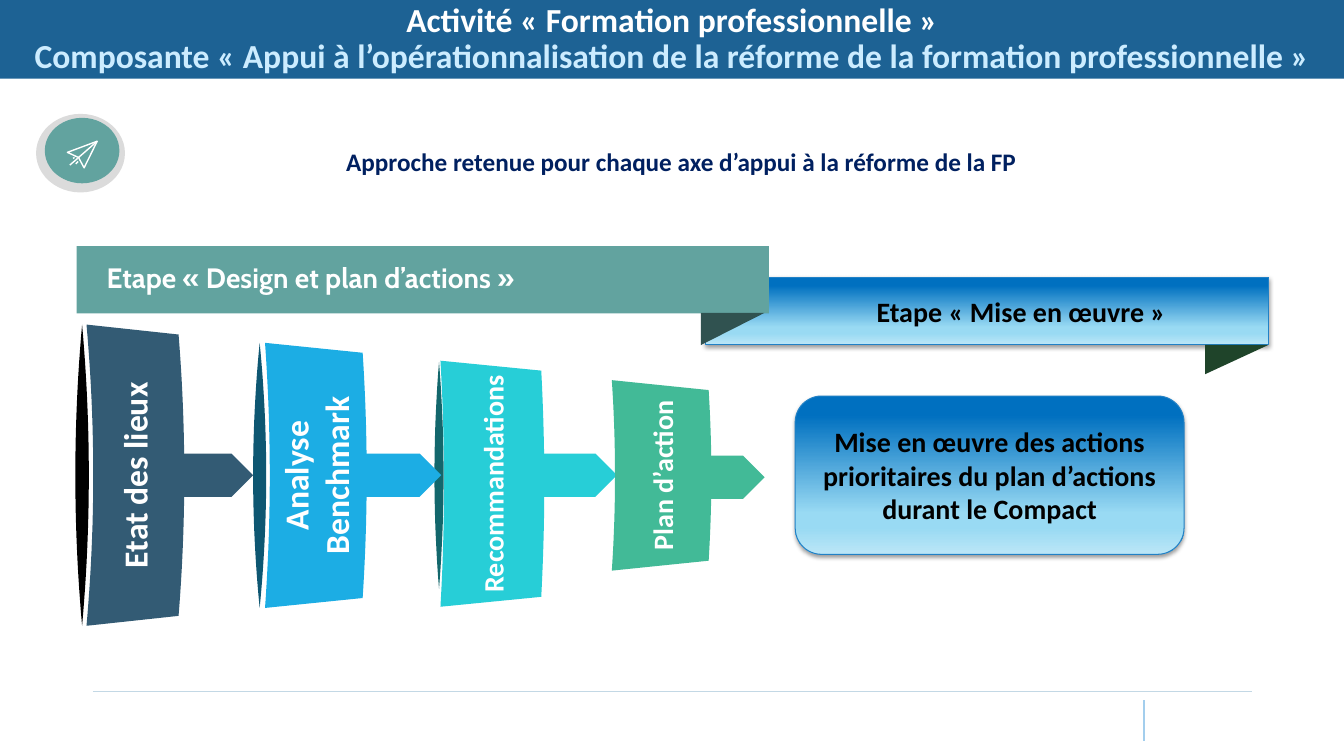
from lxml import etree
from pptx import Presentation
from pptx import util as u
from pptx.dml.color import RGBColor
from pptx.enum import shapes, text
from pptx.oxml import parse_xml
from pptx.oxml.ns import nsdecls, qn

Cm, Pt = u.Cm, u.Pt
SHAPE = shapes.MSO_SHAPE
LEFT, CENTER = text.PP_ALIGN.LEFT, text.PP_ALIGN.CENTER
WHITE, TEAL, NAVY = "FFFFFF", "62A39F", "002060"
STOPS = [(12, "0070C0"), (74, "99DAF3"), (83, "99DAF3"), (100, "BBE6F7")]

# name: label, size, colour, back colour, left, right, top, bottom, label width, label height
STAGES = [
    (["Etat des lieux"], 24, "335B74", "000000", (2.18, 4.5, 8.18, 15.77), 0.17, (5.44, 1.27)),
    (["Analyse", "Benchmark"], 24, "1CADE4", "0E5772", (6.68, 9.14, 8.64, 15.32), 0.12, (5.74, 2.31)),
    (["Recommandations"], 20, "27CED7", "13676C", (11.1, 13.64, 9.09, 15.29), 0.09, (6, 1.12)),
    (["Plan d’action"], 20, "42BA97", None, (15.42, 17.86, 9.58, 14.38), 0.08, (4.32, 1.12)),
]
LENSES = [(1.9, 8.18, 0.34, 7.59), (6.38, 8.64, 0.33, 6.68), (10.95, 9.12, 0.23, 5.72)]
ARROWS = [(4.5, 11.43, 1.88), (9.09, 11.43, 2.03), (13.64, 11.43, 1.91), (17.7, 11.48, 1.57)]


def rgb(value):
    return RGBColor.from_string(value)


def paint(sp, color):
    sp.shadow.inherit = False
    sp.fill.solid()
    sp.fill.fore_color.rgb = rgb(color)
    sp.line.fill.background()
    return sp


def shape(s, kind, box, color, rotation=0):
    sp = paint(s.shapes.add_shape(kind, *map(Cm, box)), color)
    sp.rotation = rotation
    return sp


def write(sp, lines, size, colors, align=CENTER, font="Calibri", spacing=1.0):
    tf = sp.text_frame
    tf.word_wrap = True
    tf.auto_size = text.MSO_AUTO_SIZE.NONE
    tf.vertical_anchor = text.MSO_ANCHOR.MIDDLE
    for i, (line, color) in enumerate(zip(lines, colors)):
        p = tf.add_paragraph() if i else tf.paragraphs[0]
        p.alignment = align
        p.line_spacing = spacing
        r = p.add_run()
        r.text = line
        r.font.size, r.font.name, r.font.bold = Pt(size), font, True
        r.font.color.rgb = rgb(color)
    return tf


def gloss(sp):
    sp.fill.background()
    stops = "".join(f'<a:gs pos="{pos * 1000}"><a:srgbClr val="{c}"/></a:gs>' for pos, c in STOPS)
    grad = parse_xml(f'<a:gradFill {nsdecls("a")} rotWithShape="1"><a:gsLst>{stops}</a:gsLst>'
                     '<a:lin ang="5400000" scaled="0"/></a:gradFill>')
    spPr = sp._element.spPr
    spPr.replace(spPr.find(qn("a:noFill")), grad)
    sp.line.color.rgb = rgb("2181C6")
    sp.line.width = Pt(0.75)
    spPr.find(qn("a:effectLst")).append(parse_xml(
        f'<a:outerShdw {nsdecls("a")} blurRad="40000" dist="20000" dir="5400000" rotWithShape="0">'
        '<a:srgbClr val="000000"><a:alpha val="38000"/></a:srgbClr></a:outerShdw>'))


def bow(x, y0, y1, bulge, steps=24):
    return [(x + bulge * 4 * t * (1 - t), y0 + (y1 - y0) * t)
            for t in (i / steps for i in range(steps + 1))]


def outline(s, contours, closed=True):
    points = [[(Cm(x), Cm(y)) for x, y in c] for c in contours]
    fb = s.shapes.build_freeform(*points[0][0])
    for i, c in enumerate(points):
        if i:
            fb.move_to(*c[0])
        fb.add_line_segments(c[1:], close=closed)
    return fb.convert_to_shape()


def rule(s, x0, y0, x1, y1, color):
    line = s.shapes.add_connector(shapes.MSO_CONNECTOR.STRAIGHT, *map(Cm, (x0, y0, x1, y1)))
    line.line.color.rgb = rgb(color)
    line.line.width = Pt(0.75)
    etree.SubElement(line._element.spPr, qn("a:effectLst"))


def header(s, x, y, w, h):
    sp = s.shapes.title
    sp.left, sp.top, sp.width, sp.height = map(Cm, (x, y, w, h))
    sp.fill.solid()
    sp.fill.fore_color.rgb = rgb("1D6294")
    tf = write(sp, ["Activité « Formation professionnelle »",
                    "Composante « Appui à l’opérationnalisation de la réforme de la formation professionnelle »"],
               24, [WHITE, "CCECFF"], spacing=0.9)
    tf.margin_left = tf.margin_right = Cm(0.28)
    tf.margin_top = tf.margin_bottom = Cm(0.15)


def badge(s, x, y, w, h):
    shape(s, SHAPE.OVAL, (x, y, w, h), "DBDBDB")
    shape(s, SHAPE.OVAL, (x + 0.22, y + 0.1, 1.88, 1.65), TEAL)
    nose, fold = (1.54, 0.69), (1.07, 1.1)
    strokes = [[(0.79, 0.97), nose, (1.21, 1.36), fold, (0.79, 0.97)], [fold, nose],
               [(0.93, 1.12), (0.97, 1.1)], [(0.85, 1.29), (1.05, 1.12)], [(1, 1.26), (1.06, 1.2)]]
    plane = outline(s, [[(x + a, y + b) for a, b in c] for c in strokes], closed=False)
    plane.shadow.inherit = False
    plane.fill.background()
    plane.line.color.rgb = rgb(WHITE)
    plane.line.width = Pt(1)


def subtitle(s, *box):
    write(shape(s, SHAPE.RECTANGLE, box, WHITE),
          ["Approche retenue pour chaque axe d’appui à la réforme de la FP"], 18, [NAVY])


def funnel(s):
    for (x, y, w, h), stage in zip(LENSES, STAGES):
        mid = x + w / 2
        edge = bow(mid, y, y + h, w / 2) + bow(mid, y + h, y, -w / 2)
        paint(outline(s, [edge]), stage[3])
    for (x, y, w), stage in zip(ARROWS, STAGES):
        shape(s, SHAPE.PENTAGON, (x, y, w, 1.09), stage[2])
    for lines, size, color, _, (left, right, top, bottom), bulge, (w, h) in STAGES:
        edge = bow(right, top + 0.25, bottom - 0.25, bulge * 0.85) + bow(left, bottom, top, bulge)
        paint(outline(s, [edge]), color)
        cx, cy = (left + right) / 2 + 0.04, (top + bottom) / 2
        sp = s.shapes.add_textbox(*map(Cm, (cx - w / 2, cy - h / 2, w, h)))
        sp.rotation = 270
        write(sp, lines, size, [WHITE] * len(lines))


def ribbons(s, x, y, w, h):
    back = shape(s, SHAPE.RECTANGLE, (x + 15.85, y + 0.79, 14.2, h), WHITE)
    gloss(back)
    write(back, ["Etape « Mise en œuvre »"], 20, ["000000"]).margin_left = Cm(1.96)
    front = shape(s, SHAPE.RECTANGLE, (x, y, w, h), TEAL)
    tf = write(front, ["Etape « Design et plan d’actions »"], 20, [WHITE], LEFT, "Cabin", 0.9)
    tf.margin_left = Cm(0.76)
    tf.margin_right = tf.margin_top = tf.margin_bottom = 0
    tf.paragraphs[0].space_after = Pt(2.7)
    shape(s, SHAPE.RIGHT_TRIANGLE, (x + 16.13, y + 1.29, 0.81, 1.6), "305250", 90)
    shape(s, SHAPE.RIGHT_TRIANGLE, (x + 28.87, y + 2.06, 0.74, 1.6), "1F442A", 90)


def outcome(s, *box):
    sp = shape(s, SHAPE.ROUNDED_RECTANGLE, box, WHITE)
    gloss(sp)
    write(sp, ["Mise en œuvre des actions prioritaires du plan d’actions durant le Compact"], 20, ["000000"])


def main():
    prs = Presentation()
    prs.slide_width, prs.slide_height = Cm(33.87), Cm(19.05)
    s = prs.slides.add_slide(prs.slide_layouts[5])
    rule(s, 2.34, 17.42, 31.55, 17.42, "C3D8E5")
    rule(s, 28.83, 17.65, 28.83, 18.67, "A3CEED")
    header(s, 0, 0, 33.87, 1.98)
    badge(s, 0.91, 2.87, 2.24, 1.98)
    subtitle(s, 8.03, 3.55, 18.29, 1.02)
    funnel(s)
    outcome(s, 20.04, 9.98, 9.8, 3.99)
    ribbons(s, 1.93, 6.2, 17.45, 1.7)
    prs.save("out.pptx")


if __name__ == "__main__":
    main()
